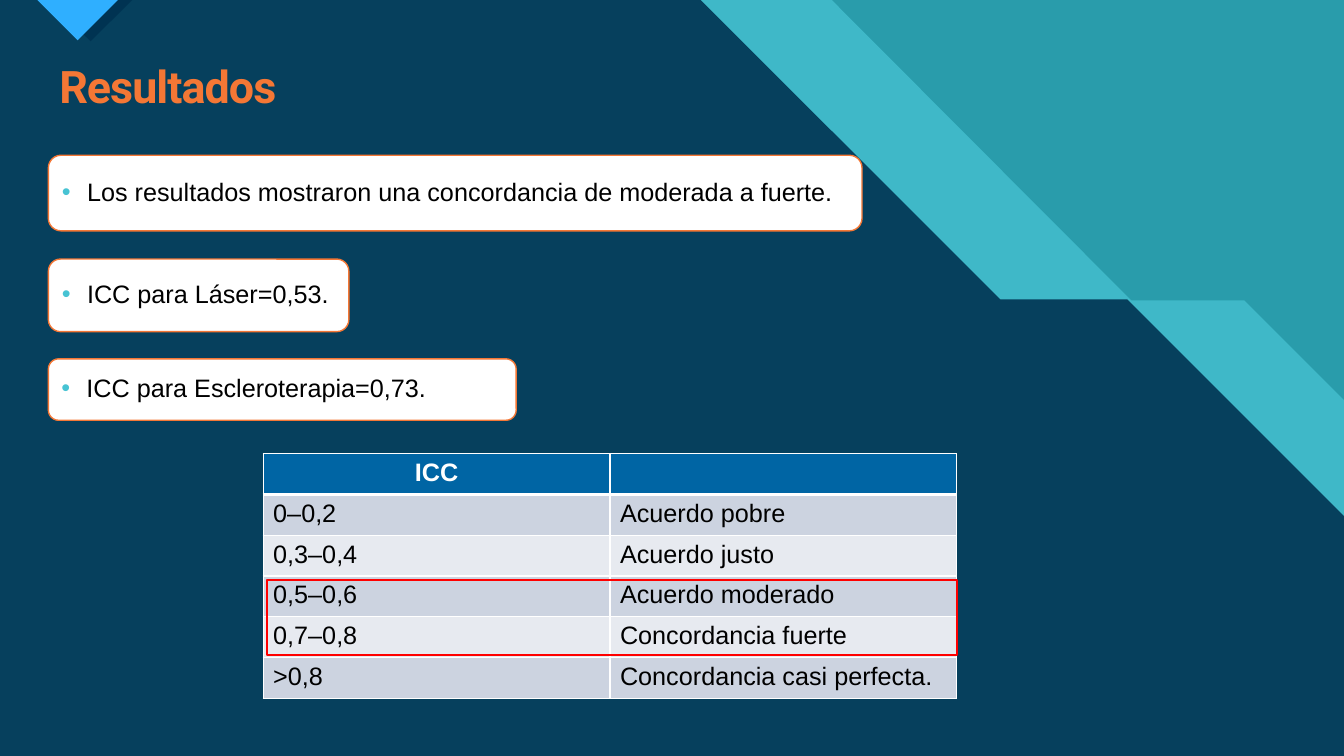
import pptx
import pptx.dml.color
import pptx.enum.shapes
import pptx.enum.text
import pptx.oxml.ns
import pptx.util
from lxml import etree

Inches = pptx.util.Inches
Pt = pptx.util.Pt
ALIGN = pptx.enum.text.PP_ALIGN
ANCHOR = pptx.enum.text.MSO_ANCHOR
SHAPE = pptx.enum.shapes.MSO_SHAPE

COLORS = {
    "teal": "299CAB", "aqua": "47C3D3", "navy": "003352", "blue": "2FAFFF",
    "orange": "F47735", "white": "FFFFFF", "black": "000000", "red": "FF0000",
    "header": "0065A4", "row_dark": "CCD3E0", "row_light": "E7EAF0",
}
WIDTH, HEIGHT = 13.33, 7.5

# Points, fill colour, opacity in percent; from back to front
BACKDROP = [
    ([(0, 0), (8.25, 0), (11.22, 2.98), (12.34, 2.98), (WIDTH, 3.97),
      (WIDTH, HEIGHT), (0, HEIGHT)], "aqua", 74),
    ([(0, 0), (6.95, 0), (9.92, 2.97), (11.18, 2.97), (WIDTH, 5.12),
      (WIDTH, HEIGHT), (0, HEIGHT)], "navy", 90),
    ([(0.48, 0), (0.9, 0.41), (1.31, 0)], "navy", 100),
    ([(0.37, 0), (0.77, 0.4), (1.17, 0)], "blue", 100),
]
TITLE = "Resultados"
# Text, top, width, height
FINDINGS = [
    ("Los resultados mostraron una concordancia de moderada a fuerte.", 1.54, 8.07, 0.75),
    ("ICC para Láser=0,53.", 2.57, 2.98, 0.72),
    ("ICC para Escleroterapia=0,73.", 3.56, 4.64, 0.61),
]
FINDINGS_LEFT = 0.48
ICC_ROWS = [
    ("ICC", ""),
    ("0–0,2", "Acuerdo pobre"),
    ("0,3–0,4", "Acuerdo justo"),
    ("0,5–0,6", "Acuerdo moderado"),
    ("0,7–0,8", "Concordancia fuerte"),
    (">0,8", "Concordancia casi perfecta."),
]
TABLE_LEFT, TABLE_TOP, TABLE_WIDTH, TABLE_HEIGHT = 2.61, 4.5, 6.88, 2.43
HIGHLIGHT = (2.65, 5.75, 6.84, 0.75)


def rgb(name):
    return pptx.dml.color.RGBColor.from_string(COLORS[name])


def add_xml(parent, tag, **attributes):
    return etree.SubElement(parent, pptx.oxml.ns.qn(tag), attributes)


def write(frame, text, size=18, font="Arial", color="black", bold=False,
          align=ALIGN.LEFT, line_spacing=None, space_before=None, tracking=None):
    para = frame.paragraphs[0]
    para.alignment = align
    if line_spacing is not None:
        para.line_spacing = line_spacing
    if space_before is not None:
        para.space_before = Pt(space_before)
    span = para.add_run()
    span.text = text
    span.font.size = Pt(size)
    span.font.name = font
    span.font.bold = bold
    span.font.color.rgb = rgb(color)
    if tracking is not None:
        span.font._element.set("spc", str(round(tracking * 100)))
    return para


def add_bullet(para, color):
    properties = para._p.get_or_add_pPr()
    properties.set("marL", str(Inches(0.25)))
    properties.set("indent", str(-Inches(0.25)))
    add_xml(add_xml(properties, "a:buClr"), "a:srgbClr", val=COLORS[color])
    add_xml(properties, "a:buFont", typeface="Arial")
    add_xml(properties, "a:buChar", char="•")


def add_polygon(page, points, color, opacity):
    corners = [(Inches(x), Inches(y)) for x, y in points]
    builder = page.shapes.build_freeform(*corners[0])
    builder.add_line_segments(corners[1:], close=True)
    polygon = builder.convert_to_shape()
    polygon.shadow.inherit = False
    polygon.line.fill.background()
    polygon.fill.solid()
    polygon.fill.fore_color.rgb = rgb(color)
    if opacity < 100:
        fill_color = polygon._element.spPr.find(".//" + pptx.oxml.ns.qn("a:srgbClr"))
        add_xml(fill_color, "a:alpha", val=str(opacity * 1000))


def add_box(page, kind, place, line_color, line_width, fill_color=None):
    box = page.shapes.add_shape(kind, *map(Inches, place))
    box.shadow.inherit = False
    box.line.color.rgb = rgb(line_color)
    box.line.width = Pt(line_width)
    if fill_color:
        box.fill.solid()
        box.fill.fore_color.rgb = rgb(fill_color)
    else:
        box.fill.background()
    return box


def add_borders(cell, bottom_width):
    """Draw white cell borders, placed ahead of the fill as the schema asks."""
    properties = cell._tc.get_or_add_tcPr()
    widths = {"a:lnL": 1, "a:lnR": 1, "a:lnT": 1, "a:lnB": bottom_width}
    for index, (tag, width) in enumerate(widths.items()):
        border = add_xml(properties, tag, w=str(Pt(width)))
        add_xml(add_xml(border, "a:solidFill"), "a:srgbClr", val=COLORS["white"])
        properties.insert(index, border)


def add_icc_table(page):
    frame = page.shapes.add_table(
        len(ICC_ROWS), 2, Inches(TABLE_LEFT), Inches(TABLE_TOP),
        Inches(TABLE_WIDTH), Inches(TABLE_HEIGHT))
    for row_index, row in enumerate(ICC_ROWS):
        is_header = row_index == 0
        fill_color = "header" if is_header else ("row_light", "row_dark")[row_index % 2]
        for column_index, text in enumerate(row):
            cell = frame.table.cell(row_index, column_index)
            cell.fill.solid()
            cell.fill.fore_color.rgb = rgb(fill_color)
            add_borders(cell, 3 if is_header else 1)
            if text:
                write(cell.text_frame, text, bold=is_header,
                      color="white" if is_header else "black",
                      align=ALIGN.CENTER if is_header else ALIGN.LEFT)


def main():
    deck = pptx.Presentation()
    deck.slide_width, deck.slide_height = Inches(WIDTH), Inches(HEIGHT)
    page = deck.slides.add_slide(deck.slide_layouts[6])
    page.background.fill.solid()
    page.background.fill.fore_color.rgb = rgb("teal")

    for points, color, opacity in BACKDROP:
        add_polygon(page, points, color, opacity)

    title = page.shapes.add_textbox(Inches(0.49), Inches(0.59), Inches(12.26), Inches(0.59))
    title.text_frame.word_wrap = True
    write(title.text_frame, TITLE, size=32, font="Roboto", color="orange",
          bold=True, line_spacing=0.9, tracking=-0.7)

    for text, top, width, height in FINDINGS:
        box = add_box(page, SHAPE.ROUNDED_RECTANGLE, (FINDINGS_LEFT, top, width, height),
                      "orange", 1, "white")
        box.text_frame.word_wrap = True
        box.text_frame.vertical_anchor = ANCHOR.MIDDLE
        add_bullet(write(box.text_frame, text, line_spacing=0.9, space_before=10), "aqua")

    add_icc_table(page)
    add_box(page, SHAPE.RECTANGLE, HIGHLIGHT, "red", 1.5)
    deck.save("out.pptx")


if __name__ == "__main__":
    main()
